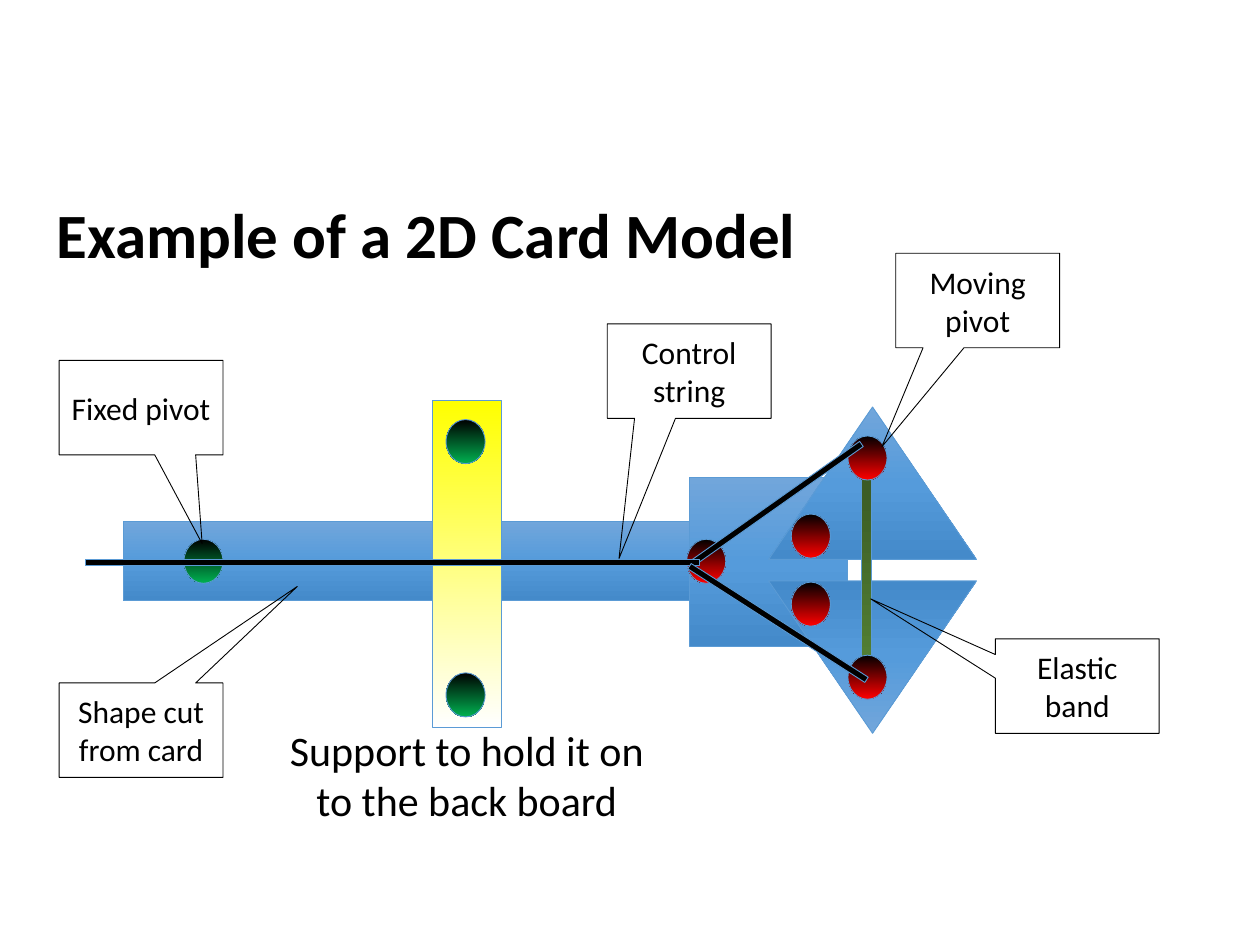
from copy import deepcopy

from pptx import Presentation
from pptx.dml.color import RGBColor
from pptx.enum.shapes import MSO_SHAPE as Shape
from pptx.enum.text import MSO_ANCHOR as Anchor, MSO_AUTO_SIZE as Fit, PP_ALIGN as Align
from pptx.util import Inches, Pt

BLACK = RGBColor(0x00, 0x00, 0x00)
EDGE = RGBColor(0x5B, 0x9B, 0xD5)
CARD = [RGBColor(0x71, 0xA6, 0xDB), RGBColor(0x55, 0x9B, 0xDB), RGBColor(0x44, 0x8A, 0xCA)]
RED = [BLACK, RGBColor(0xFF, 0x00, 0x00)]
GREEN = [BLACK, RGBColor(0x00, 0xB0, 0x50)]
BAND = [RGBColor(0x38, 0x57, 0x23), RGBColor(0x54, 0x82, 0x35)]
YELLOW = [RGBColor(0xFF, 0xFF, 0x00), RGBColor(0xFF, 0xFF, 0xFF)]
STRING = [BLACK]

FONT = "Calibri"
DOT = (0.31, 0.35)
JAW = (1.65, 1.21)
ROD = (1.67, 0.05)
NOTE = (1.3, 0.75)

# Text: words, position, size, points, bold, alignment
TEXTS = [
    ("Example of a 2D Card Model", (0.35, 1.5), (9.29, 0.71), 36, True, Align.LEFT),
    ("Support to hold it on to the back board", (2.11, 5.7), (3.19, 0.91), 24, False, Align.CENTER),
]

# Model parts from back to front: kind, position, size, colours, turn
PARTS = [
    (Shape.RECTANGLE, (0.98, 4.14), (5.12, 0.63), CARD, 0),
    (Shape.RECTANGLE, (5.47, 3.79), (1.26, 1.34), CARD, 0),
    (Shape.ISOSCELES_TRIANGLE, (6.1, 3.23), JAW, CARD, 0),
    (Shape.ISOSCELES_TRIANGLE, (6.1, 4.61), JAW, CARD, 180),
    (Shape.OVAL, (6.28, 4.08), DOT, RED, 0),
    (Shape.OVAL, (6.28, 4.62), DOT, RED, 0),
    (Shape.OVAL, (5.45, 4.28), DOT, RED, 0),
    (Shape.OVAL, (1.46, 4.28), DOT, GREEN, 0),
    (Shape.RECTANGLE, (6.84, 3.64), (0.08, 1.74), BAND, 0),
    (Shape.OVAL, (6.73, 5.2), DOT, RED, 0),
    (Shape.OVAL, (6.73, 3.46), DOT, RED, 0),
    (Shape.RECTANGLE, (5.32, 3.98), ROD, STRING, -35.2),
    (Shape.RECTANGLE, (3.43, 3.18), (0.55, 2.59), YELLOW, 0),
    (Shape.RECTANGLE, (0.68, 4.44), (4.87, 0.05), STRING, 0),
    (Shape.RECTANGLE, (5.34, 4.92), ROD, STRING, 32.7),
    (Shape.OVAL, (3.54, 5.34), DOT, GREEN, 0),
    (Shape.OVAL, (3.54, 3.33), DOT, GREEN, 0),
]

# Callouts: words, position, tip as a share of the box from its centre
NOTES = [
    ("Moving pivot", (7.11, 2.01), (-0.585, 1.548)),
    ("Fixed pivot", (0.47, 2.86), (0.373, 1.44)),
    ("Control string", (4.82, 2.57), (-0.428, 1.983)),
    ("Elastic band", (7.9, 5.07), (-1.261, -0.923)),
    ("Shape cut from card", (0.47, 5.42), (0.954, -1.521)),
]


def write(shape, words, size, bold=False, align=Align.CENTER):
    frame = shape.text_frame
    frame.word_wrap = True
    frame.text = words
    para = frame.paragraphs[0]
    para.alignment = align
    font = para.runs[0].font
    font.name, font.size, font.bold = FONT, Pt(size), bold
    font.color.rgb = BLACK


def paint(shape, shades):
    """Fill with one colour, or evenly spaced shades from top to bottom."""
    fill = shape.fill
    if len(shades) == 1:
        fill.solid()
        fill.fore_color.rgb = shades[0]
        return
    fill.gradient()
    fill.gradient_angle = 270
    first = shape._element.spPr.xpath(".//a:gs")[0]
    for _ in shades[2:]:
        first.addnext(deepcopy(first))
    for i, (stop, shade) in enumerate(zip(fill.gradient_stops, shades)):
        stop.position = i / (len(shades) - 1)
        stop.color.rgb = shade


def draw(kind, pos, size, edge):
    shape = slide.shapes.add_shape(kind, *map(Inches, pos + size))
    shape.shadow.inherit = False
    shape.line.color.rgb = edge
    shape.line.width = Pt(0.5)
    return shape


deck = Presentation()
deck.slide_width, deck.slide_height = Inches(10), Inches(7.5)
slide = deck.slides.add_slide(deck.slide_layouts[6])

# Heading and support label
for words, pos, size, points, bold, align in TEXTS:
    box = slide.shapes.add_textbox(*map(Inches, pos + size))
    write(box, words, points, bold, align)
    box.text_frame.auto_size = Fit.SHAPE_TO_FIT_TEXT

# Card model
for kind, pos, size, shades, turn in PARTS:
    part = draw(kind, pos, size, EDGE)
    part.rotation = turn
    paint(part, shades)

# Callouts
for words, pos, tip in NOTES:
    note = draw(Shape.RECTANGULAR_CALLOUT, pos, NOTE, BLACK)
    note.fill.background()
    note.adjustments[0], note.adjustments[1] = tip
    write(note, words, 18)
    note.text_frame.vertical_anchor = Anchor.MIDDLE

deck.save("out.pptx")
